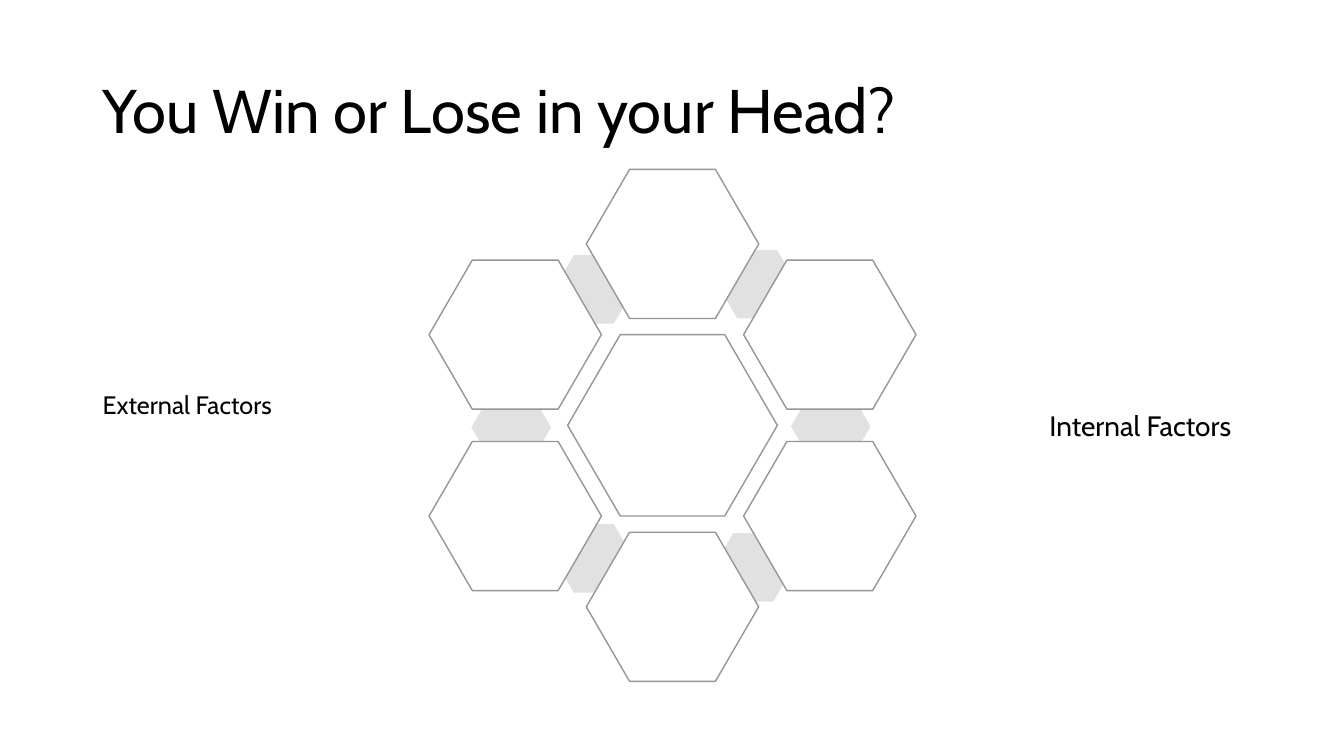
from dataclasses import dataclass

from pptx import Presentation
from pptx import util as u
from pptx.dml.color import RGBColor
from pptx.enum import shapes, text

PX = 9144


@dataclass(frozen=True)
class Theme:
    font: str = "Cabin"
    ink: RGBColor = RGBColor(0x00, 0x00, 0x00)
    paper: RGBColor = RGBColor(0xFF, 0xFF, 0xFF)
    outline: RGBColor = RGBColor(0x96, 0x96, 0x96)
    tab: RGBColor = RGBColor(0xE1, 0xE1, 0xE1)
    title_size: int = 44
    external_size: int = 18
    internal_size: int = 20


THEME = Theme()


def px(*lengths):
    return [u.Emu(round(length * PX)) for length in lengths]


def write(frame, wording, size):
    frame.text = wording
    frame.word_wrap = True
    font = frame.paragraphs[0].runs[0].font
    font.name, font.size, font.color.rgb = THEME.font, u.Pt(size), THEME.ink


def add_title(slide, box, wording):
    title = slide.shapes.title
    title.left, title.top, title.width, title.height = px(*box)
    frame = title.text_frame
    write(frame, wording, THEME.title_size)
    frame.vertical_anchor = text.MSO_ANCHOR.MIDDLE
    frame.paragraphs[0].alignment = text.PP_ALIGN.LEFT
    frame.paragraphs[0].line_spacing = 0.9


def add_label(slide, box, wording, size):
    frame = slide.shapes.add_textbox(*px(*box)).text_frame
    write(frame, wording, size)
    frame.auto_size = text.MSO_AUTO_SIZE.SHAPE_TO_FIT_TEXT


def add_hexagon(slide, center, size, corner, fill, outline=None):
    (x, y), (width, height) = center, size
    hexagon = slide.shapes.add_shape(
        shapes.MSO_SHAPE.HEXAGON,
        *px(x - width / 2, y - height / 2, width, height))
    hexagon.adjustments[0] = corner
    hexagon.shadow.inherit = False
    hexagon.fill.solid()
    hexagon.fill.fore_color.rgb = fill
    if outline is None:
        hexagon.line.fill.background()
    else:
        hexagon.line.color.rgb = outline
        hexagon.line.width = u.Pt(1)


def add_honeycomb(slide, box):
    left, top, width, height = box
    x, y = left + width // 2, top + height // 2
    petal = (171, 148)
    column = (width - petal[0]) // 2
    rise = (height - petal[1]) // 2
    tabs = [(-78, -135), (84, -140), (157, 1), (80, 141), (-78, 132), (-160, 2)]
    petals = [(0, -rise), (column, -rise / 2), (column, rise / 2),
              (0, rise), (-column, rise / 2), (-column, -rise / 2)]

    for dx, dy in tabs:
        add_hexagon(slide, (x + dx, y + dy), (79, 68), 0.29, THEME.tab)
    add_hexagon(slide, (x, y), (208, 180), 0.29, THEME.paper, THEME.outline)
    for dx, dy in petals:
        add_hexagon(slide, (x + dx, y + dy), petal, 0.29,
                    THEME.paper, THEME.outline)


def main():
    deck = Presentation()
    deck.slide_width, deck.slide_height = px(1333, 750)
    slide = deck.slides.add_slide(deck.slide_layouts[5])
    add_honeycomb(slide, (425, 168, 484, 508))
    add_title(slide, (92, 40, 1150, 145), "You Win or Lose in your Head?")
    add_label(slide, (92, 381, 317, 40), "External Factors", THEME.external_size)
    add_label(slide, (1031, 400, 211, 44), "Internal Factors", THEME.internal_size)
    deck.save("out.pptx")


if __name__ == "__main__":
    main()
